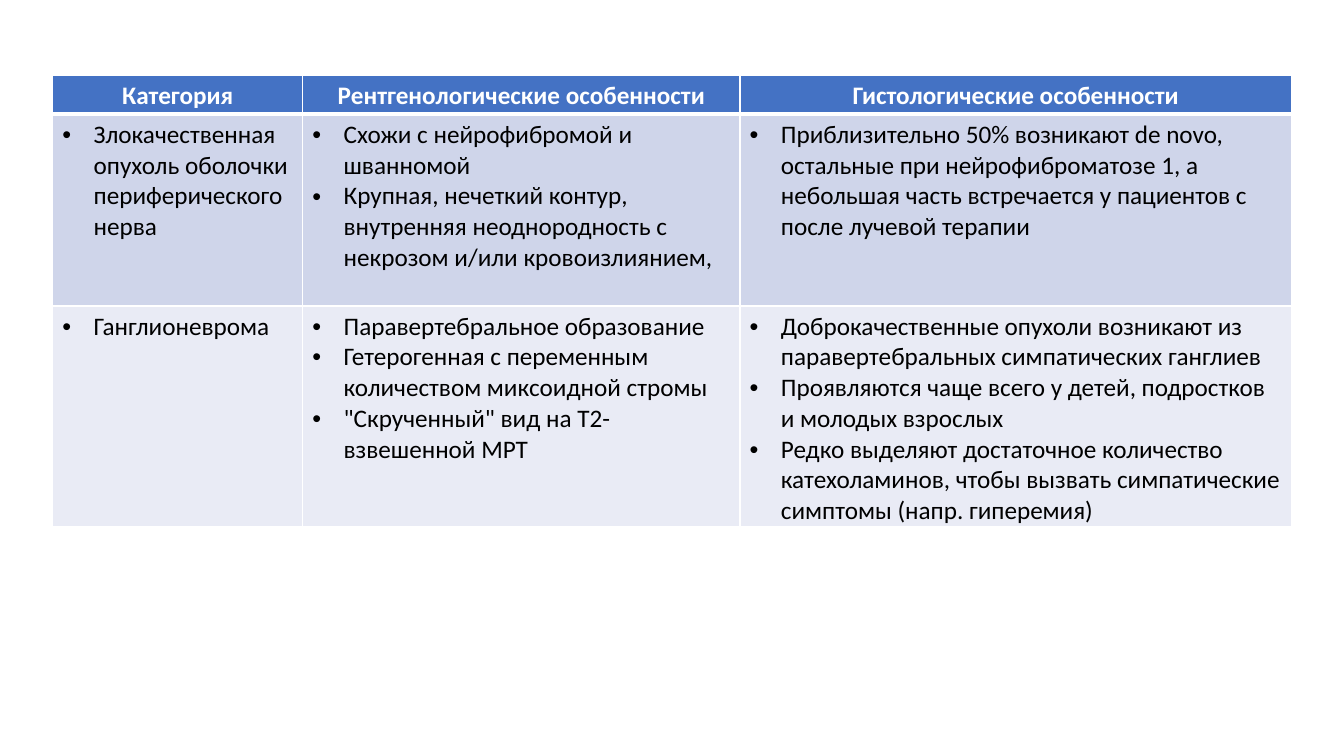
import pptx
import pptx.util
import pptx.oxml
import pptx.oxml.ns
import pptx.dml.color
import pptx.enum.text
from lxml import etree

Cm = pptx.util.Cm
WIDTHS = [6.3, 11.02, 13.9]
HEIGHTS = [0.97, 4.83, 5.57]
FILLS = ["4472C4", "CFD5EA", "E9EBF5"]
HEADS = ["Категория", "Рентгенологические особенности", "Гистологические особенности"]
ROWS = [
    [
        ["Злокачественная опухоль оболочки периферического нерва"],
        ["Схожи с нейрофибромой и шванномой",
         "Крупная, нечеткий контур, внутренняя неоднородность с некрозом и/или кровоизлиянием,"],
        ["Приблизительно 50% возникают de novo, остальные при нейрофиброматозе 1, "
         "а небольшая часть встречается у пациентов с после лучевой терапии"],
    ],
    [
        ["Ганглионеврома"],
        ["Паравертебральное образование",
         "Гетерогенная с переменным количеством миксоидной стромы",
         "\"Скрученный\" вид на Т2-взвешенной МРТ"],
        ["Доброкачественные опухоли возникают из паравертебральных симпатических ганглиев",
         "Проявляются чаще всего у детей, подростков и молодых взрослых",
         "Редко выделяют достаточное количество катехоламинов, "
         "чтобы вызвать симпатические симптомы (напр. гиперемия)"],
    ],
]


def color(code):
    return pptx.dml.color.RGBColor.from_string(code)


def add(parent, tag, **attrs):
    """Append a DrawingML child element."""
    node = etree.SubElement(parent, pptx.oxml.ns.qn("a:" + tag))
    for key, value in attrs.items():
        node.set(key, str(value))
    return node


def bullet(para):
    props = para._p.get_or_add_pPr()
    indent = Cm(0.79)
    props.set("marL", str(indent))
    props.set("indent", str(-indent))
    add(props, "buFont", typeface="Arial")
    add(props, "buChar", char="•")


def write(para, text, size=18, ink="000000", bold=False, center=False, dot=False):
    run = para.add_run()
    run.text = text
    run.font.name = "Calibri"
    run.font.size = pptx.util.Pt(size)
    run.font.bold = bold
    run.font.color.rgb = color(ink)
    align = pptx.enum.text.PP_ALIGN
    para.alignment = align.CENTER if center else align.LEFT
    if dot:
        bullet(para)


def border(cell, **widths):
    """Draw white cell edges; widths in points by side L, R, T, B."""
    props = cell._tc.get_or_add_tcPr()
    for side, width in widths.items():
        line = add(props, "ln" + side, w=pptx.util.Pt(width))
        add(add(line, "solidFill"), "srgbClr", val="FFFFFF")


def fill_cell(cell, texts, fill, top, base, **style):
    cell.margin_left = cell.margin_right = Cm(0.24)
    cell.margin_top, cell.margin_bottom = Cm(0.13), Cm(0)
    border(cell, L=1, R=1, T=top, B=base)
    cell.fill.solid()
    cell.fill.fore_color.rgb = color(fill)
    frame = cell.text_frame
    for i, text in enumerate(texts):
        para = frame.add_paragraph() if i else frame.paragraphs[0]
        write(para, text, **style)


def add_grid(slide):
    rows = [[[head] for head in HEADS]] + ROWS
    shape = slide.shapes.add_table(len(rows), len(WIDTHS), Cm(1.33), Cm(1.91),
                                   Cm(sum(WIDTHS)), Cm(sum(HEIGHTS)))
    table = shape.table
    for col, width in zip(table.columns, WIDTHS):
        col.width = Cm(width)
    for r, row in enumerate(rows):
        table.rows[r].height = Cm(HEIGHTS[r])
        style = {"dot": True} if r else {"ink": "FFFFFF", "bold": True, "center": True}
        top, base = 3 if r == 1 else 1, 3 if r == 0 else 1
        for c, texts in enumerate(row):
            fill_cell(table.cell(r, c), texts, FILLS[r], top, base, **style)


def main():
    deck = pptx.Presentation()
    deck.slide_width, deck.slide_height = Cm(33.87), Cm(19.05)
    slide = deck.slides.add_slide(deck.slide_layouts[6])
    add_grid(slide)
    deck.save("out.pptx")


if __name__ == "__main__":
    main()
